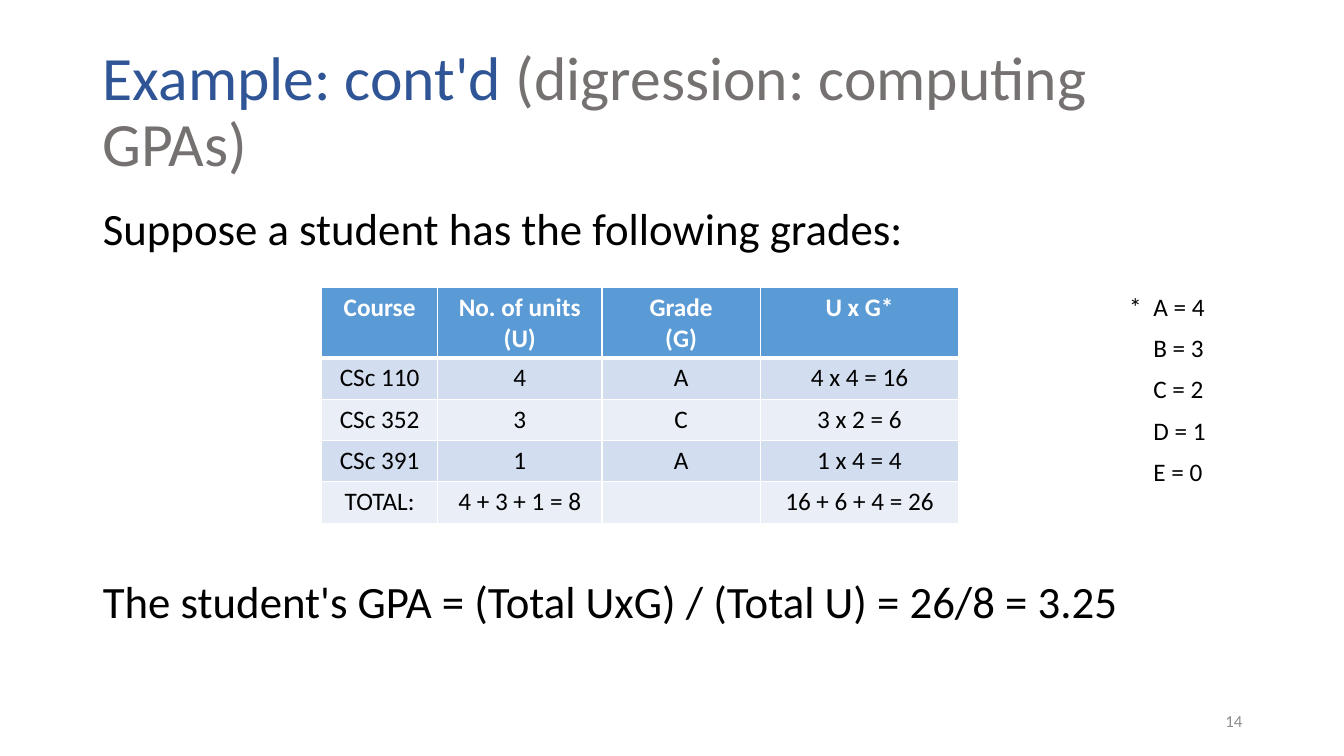
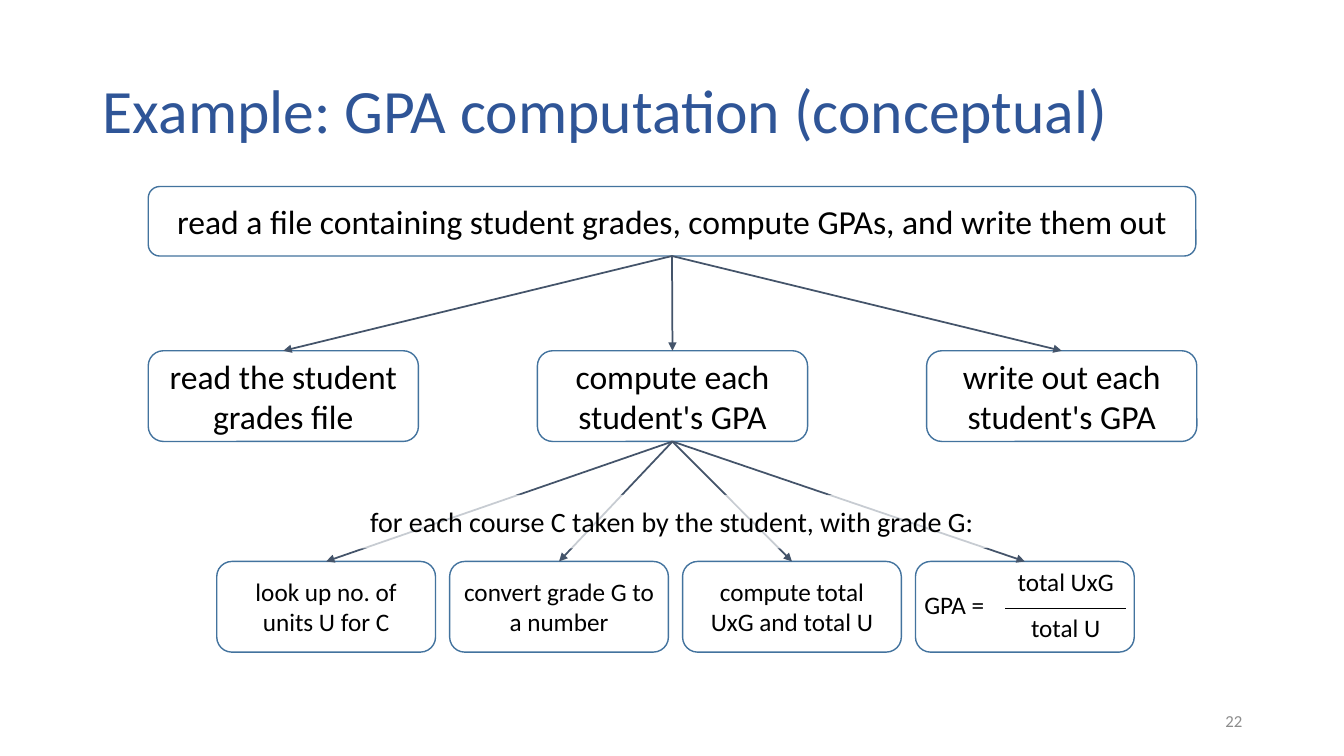
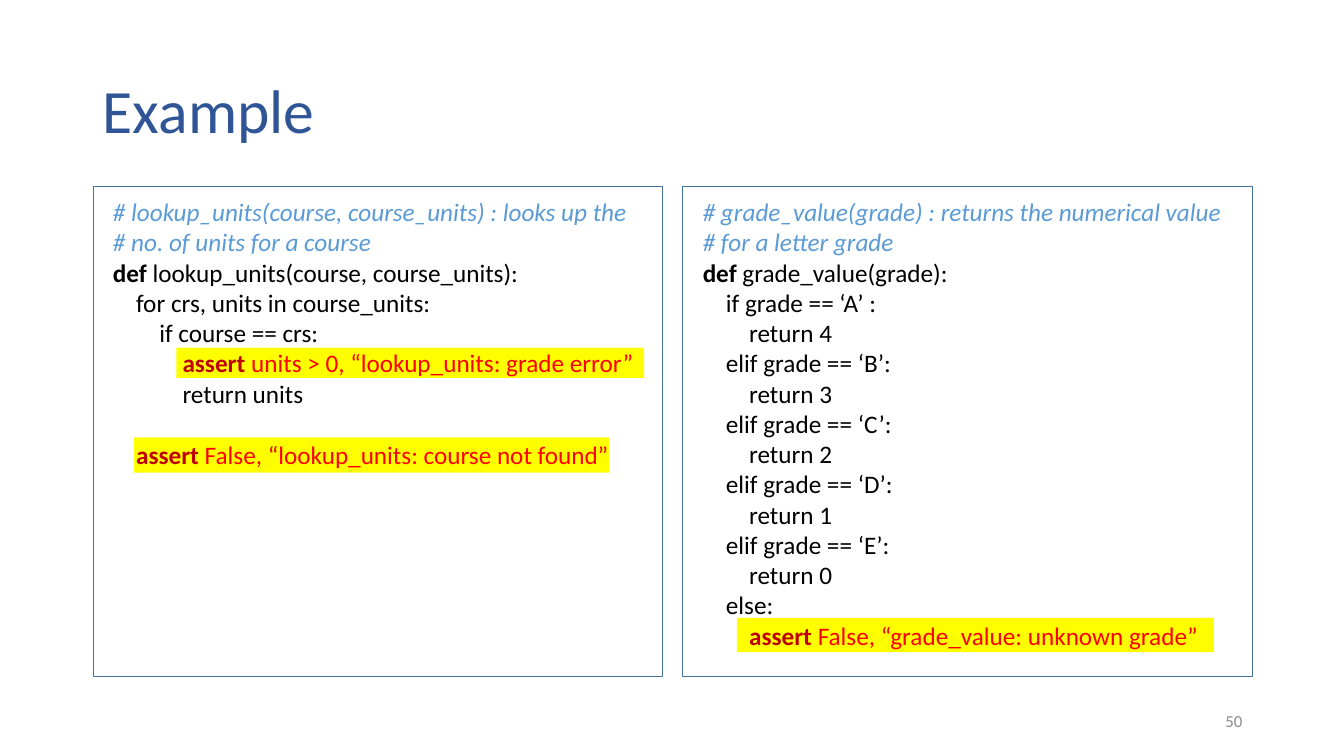
from lxml.etree import SubElement
from pptx import Presentation
from pptx.dml.color import RGBColor
from pptx.enum.shapes import MSO_CONNECTOR as Connector, MSO_SHAPE as Preset
from pptx.enum.text import MSO_ANCHOR as Anchor, MSO_AUTO_SIZE as AutoSize, PP_ALIGN as Align
from pptx.oxml.ns import qn
from pptx.util import Pt

PX = 9144
FONT = "Calibri"
NO_TABLE_STYLE = "{2D5ABB26-0587-4C30-8999-92F81FD0307C}"

BLACK = RGBColor(0x00, 0x00, 0x00)
WHITE = RGBColor(0xFF, 0xFF, 0xFF)
TITLE_BLUE = RGBColor(0x2F, 0x55, 0x97)
ASIDE_GRAY = RGBColor(0x76, 0x71, 0x71)
NUMBER_GRAY = RGBColor(0x8C, 0x8C, 0x8C)
OUTLINE_BLUE = RGBColor(0x43, 0x73, 0x9E)
ARROW_SLATE = RGBColor(0x44, 0x54, 0x6A)
HEADER_BLUE = RGBColor(0x5B, 0x9B, 0xD5)
BAND_DARK = RGBColor(0xD2, 0xDE, 0xEF)
BAND_LIGHT = RGBColor(0xEA, 0xEF, 0xF7)
HIGHLIGHT = RGBColor(0xFF, 0xFF, 0x00)
KEYWORD_RED = RGBColor(0xC0, 0x00, 0x00)
ASSERT_RED = RGBColor(0xFF, 0x00, 0x00)

TITLE = {"size": Pt(44), "color": TITLE_BLUE}
TITLE_ASIDE = {"size": Pt(44), "color": ASIDE_GRAY}
BODY = {"size": Pt(32), "color": BLACK}
NUMBER = {"size": Pt(12), "color": NUMBER_GRAY}
STEP = {"size": Pt(24), "color": BLACK}
CAPTION = {"size": Pt(20), "color": BLACK}
SMALL = {"size": Pt(18), "color": BLACK}
TABLE_HEADER = {"size": Pt(18), "color": WHITE, "bold": True}
CODE = {**SMALL, "bold": False}
CODE_KEYWORD = {**SMALL, "bold": True}
CODE_COMMENT = {"size": Pt(18), "color": HEADER_BLUE, "italic": True}
ASSERT_KEYWORD = {"size": Pt(18), "color": KEYWORD_RED, "bold": True}
ASSERT_TEXT = {"size": Pt(18), "color": ASSERT_RED, "bold": False}

CENTERED = {"alignment": Align.CENTER}
LEFT = {"alignment": Align.LEFT}
TIGHT = {"alignment": Align.LEFT, "line_spacing": 0.9}
CODE_INDENT = 23
CODE_LINE = Pt(22)

GRADES = [
    ["Course", "No. of units (U)", "Grade\n(G)", "U x G*"],
    ["CSc 110", "4", "A", "4 x 4 = 16"],
    ["CSc 352", "3", "C", "3 x 2 = 6"],
    ["CSc 391", "1", "A", "1 x 4 = 4"],
    ["TOTAL:", "4 + 3 + 1 = 8", "", "16 + 6 + 4 = 26"],
]
GRADE_POINTS = [["*", "A = 4"], ["", "B = 3"], ["", "C = 2"], ["", "D = 1"], ["", "E = 0"]]
MAIN_STEPS = ["read the student grades file", "compute each student's GPA", "write out each student's GPA"]
COURSE_STEPS = ["look up no. of units U for C", "convert grade G to a number", "compute total UxG and total U", ""]


def px(*lengths):
    return [length * PX for length in lengths]


def set_attributes(target, values):
    for name, value in values.items():
        setattr(target, name, value)


def write_paragraph(paragraph, runs, layout):
    set_attributes(paragraph, layout)
    for text, style in runs:
        run = paragraph.add_run()
        run.text = text
        values = dict(style, name=FONT)
        run.font.color.rgb = values.pop("color")
        set_attributes(run.font, values)


def write_paragraphs(frame, paragraphs):
    for index, (runs, layout) in enumerate(paragraphs):
        paragraph = frame.add_paragraph() if index else frame.paragraphs[0]
        write_paragraph(paragraph, runs, layout)


def indent_paragraph(paragraph, left):
    properties = paragraph._p.get_or_add_pPr()
    properties.set("marL", str(left * PX))
    properties.set("indent", "0")


def place(shape, left, top, width, height):
    set_attributes(shape, dict(zip(("left", "top", "width", "height"), px(left, top, width, height))))


def add_slide(presentation, layout_index, title_runs, number):
    slide = presentation.slides.add_slide(presentation.slide_layouts[layout_index])
    title = slide.shapes.title
    place(title, 92, 40, 1150, 145)
    set_attributes(title.text_frame, {"auto_size": AutoSize.NONE, "vertical_anchor": Anchor.MIDDLE})
    write_paragraphs(title.text_frame, [(title_runs, TIGHT)])
    number_box = slide.shapes.add_textbox(*px(942, 695, 300, 40))
    set_attributes(number_box.text_frame, {"word_wrap": True, "vertical_anchor": Anchor.MIDDLE})
    write_paragraphs(number_box.text_frame, [([(number, NUMBER)], {"alignment": Align.RIGHT})])
    return slide


def add_body(slide, sentences, gap):
    body = slide.placeholders[1]
    place(body, 92, 200, 1150, 476)
    body.text_frame.auto_size = AutoSize.NONE
    spacings = [Pt(10)] + [gap] * (len(sentences) - 1)
    write_paragraphs(body.text_frame, [
        ([(sentence, BODY)], {**TIGHT, "space_before": spacing})
        for sentence, spacing in zip(sentences, spacings)])
    for paragraph in body.text_frame.paragraphs:
        indent_paragraph(paragraph, 0)
        SubElement(paragraph._p.get_or_add_pPr(), qn("a:buNone"))


def add_box(slide, preset, bounds, fill=None, line=None, line_width=1):
    box = slide.shapes.add_shape(preset, *px(*bounds))
    box.shadow.inherit = False
    if fill is None:
        box.fill.background()
    else:
        box.fill.solid()
        box.fill.fore_color.rgb = fill
    if line is None:
        box.line.fill.background()
    else:
        box.line.color.rgb = line
        box.line.width = Pt(line_width)
    return box


def add_label_box(slide, bounds, text, style, **colors):
    box = add_box(slide, Preset.ROUNDED_RECTANGLE, bounds, **colors)
    if text:
        box.text_frame.vertical_anchor = Anchor.MIDDLE
        write_paragraphs(box.text_frame, [([(text, style)], CENTERED)])
    return box


def set_opacity(shape, percent):
    color = shape.fill._xPr.find(qn("a:solidFill"))[0]
    SubElement(color, qn("a:alpha")).set("val", str(percent * 1000))


def add_arrow(slide, source, target):
    arrow = slide.shapes.add_connector(Connector.STRAIGHT, 0, 0, 0, 0)
    arrow.begin_connect(source, 2)
    arrow.end_connect(target, 0)
    arrow.line.color.rgb = ARROW_SLATE
    arrow.line.width = Pt(1.25)
    SubElement(arrow.line._get_or_add_ln(), qn("a:tailEnd")).set("type", "triangle")
    SubElement(arrow._element.spPr, qn("a:effectLst"))


def set_borders(cell, color, widths):
    properties = cell._tc.get_or_add_tcPr()
    borders = [side for side in ("lnL", "lnR", "lnT", "lnB") if side in widths]
    for position, side in enumerate(borders):
        border = SubElement(properties, qn("a:" + side))
        border.set("w", str(Pt(widths[side])))
        fill = SubElement(border, qn("a:solidFill"))
        SubElement(fill, qn("a:srgbClr")).set("val", str(color))
        properties.insert(position, border)


def write_cell(cell, text, style, layout):
    write_paragraphs(cell.text_frame, [([(line, style)] if line else [], layout) for line in text.split("\n")])
    if not text:
        cell.text_frame.paragraphs[0].font.size = style["size"]


def add_plain_table(slide, left, top, column_widths, row_heights):
    bounds = px(left, top, sum(column_widths), sum(row_heights))
    table = slide.shapes.add_table(len(row_heights), len(column_widths), *bounds).table
    set_attributes(table, {"first_row": False, "horz_banding": False})
    table._tbl.tblPr.find(qn("a:tableStyleId")).text = NO_TABLE_STYLE
    for column, width in zip(table.columns, column_widths):
        column.width = width * PX
    for row, height in zip(table.rows, row_heights):
        row.height = height * PX
    for cell in table.iter_cells():
        cell.fill.background()
    return table


def add_grades_table(slide):
    table = add_plain_table(slide, 319, 285, [115, 163, 157, 197], [70] + [41] * 4)
    for row_index, row in enumerate(GRADES):
        is_header = row_index == 0
        fill = HEADER_BLUE if is_header else (BAND_LIGHT, BAND_DARK)[row_index % 2]
        top = 3 if row_index == 1 else 1
        widths = {"lnL": 1, "lnR": 1, "lnT": top, "lnB": 3 if is_header else 1}
        for column_index, text in enumerate(row):
            cell = table.cell(row_index, column_index)
            cell.fill.solid()
            cell.fill.fore_color.rgb = fill
            set_borders(cell, WHITE, widths)
            write_cell(cell, text, TABLE_HEADER if is_header else SMALL, CENTERED)


def add_points_table(slide):
    table = add_plain_table(slide, 1110, 285, [23, 98], [41] * 5)
    for row_index, row in enumerate(GRADE_POINTS):
        for column_index, text in enumerate(row):
            write_cell(table.cell(row_index, column_index), text, SMALL, LEFT)


def add_fraction(slide):
    table = add_plain_table(slide, 896, 558, [101, 120], [46, 40])
    name, numerator, denominator = table.cell(0, 0), table.cell(0, 1), table.cell(1, 1)
    name.merge(table.cell(1, 0))
    name.vertical_anchor = Anchor.MIDDLE
    for cell, text in ((name, "GPA ="), (numerator, "total UxG"), (denominator, "total U")):
        write_cell(cell, text, SMALL, CENTERED)
    set_borders(numerator, BLACK, {"lnB": 1})
    set_borders(denominator, BLACK, {"lnT": 1})


def comment(text):
    return 0, [(text, CODE_COMMENT)], {}


def definition(signature):
    return 0, [("def ", CODE_KEYWORD), (signature, CODE)], {}


def statement(level, text):
    return level, [(text, CODE)], {}


def assertion(level, text, **spacing):
    return level, [("assert ", ASSERT_KEYWORD), (text, ASSERT_TEXT)], spacing


def grade_branches():
    lines = []
    for value, grade in zip((4, 3, 2, 1, 0), "ABCDE"):
        opening = "if grade == ‘A’ :" if grade == "A" else f"elif grade == ‘{grade}’:"
        lines += [statement(1, opening), statement(2, f"return {value}")]
    return lines


def add_code_panel(slide, left, lines):
    panel = add_box(slide, Preset.RECTANGLE, (left, 185, 565, 486), line=OUTLINE_BLUE, line_width=0.25)
    frame = panel.text_frame
    set_attributes(frame, {"vertical_anchor": Anchor.TOP, "margin_left": 20 * PX, "margin_top": 10 * PX})
    write_paragraphs(frame, [(runs, {**LEFT, **spacing}) for level, runs, spacing in lines])
    for paragraph, (level, runs, spacing) in zip(frame.paragraphs, lines):
        indent_paragraph(paragraph, level * CODE_INDENT)


def build_grades_slide(presentation):
    title = [("Example: cont'd ", TITLE), ("(digression: computing GPAs)", TITLE_ASIDE)]
    slide = add_slide(presentation, 1, title, "14")
    add_body(slide, ["Suppose a student has the following grades:",
                     "The student's GPA = (Total UxG) / (Total U) = 26/8 = 3.25"], Pt(232))
    add_grades_table(slide)
    add_points_table(slide)


def build_concept_slide(presentation):
    slide = add_slide(presentation, 5, [("Example: GPA computation (conceptual)", TITLE)], "22")
    goal = add_label_box(slide, (147, 185, 1039, 69),
                         "read a file containing student grades, compute GPAs, and write them out",
                         STEP, line=OUTLINE_BLUE)
    main_boxes = [add_label_box(slide, (147 + 386 * index, 348, 268, 90), text, STEP, line=OUTLINE_BLUE)
                  for index, text in enumerate(MAIN_STEPS)]
    course_boxes = [add_label_box(slide, (215 + 231 * index, 557, 217, 90), text, SMALL, line=OUTLINE_BLUE)
                    for index, text in enumerate(COURSE_STEPS)]
    add_fraction(slide)
    for source, targets in ((goal, main_boxes), (main_boxes[1], course_boxes)):
        for target in targets:
            add_arrow(slide, source, target)
    caption = add_label_box(slide, (348, 491, 637, 53),
                            "for each course C taken by the student, with grade G:", CAPTION, fill=WHITE)
    set_opacity(caption, 70)


def build_code_slide(presentation):
    slide = add_slide(presentation, 5, [("Example", TITLE)], "50")
    for bounds in ((175, 345, 464, 30), (731, 613, 473, 34), (133, 434, 471, 35)):
        add_box(slide, Preset.RECTANGLE, bounds, fill=HIGHLIGHT)
    add_code_panel(slide, 92, [
        comment("# lookup_units(course, course_units) : looks up the"),
        comment("# no. of units for a course"),
        definition("lookup_units(course, course_units):"),
        statement(1, "for crs, units in course_units:"),
        statement(2, "if course == crs:"),
        assertion(3, "units > 0, “lookup_units: grade error”"),
        statement(3, "return units"),
        assertion(1, "False, “lookup_units: course not found”", space_before=CODE_LINE),
    ])
    add_code_panel(slide, 677, [
        comment("# grade_value(grade) : returns the numerical value"),
        comment("# for a letter grade"),
        definition("grade_value(grade):"),
        *grade_branches(),
        statement(1, "else:"),
        assertion(2, "False, “grade_value: unknown grade”"),
    ])


def main():
    presentation = Presentation()
    set_attributes(presentation, dict(zip(("slide_width", "slide_height"), px(1333, 750))))
    build_grades_slide(presentation)
    build_concept_slide(presentation)
    build_code_slide(presentation)
    presentation.save("out.pptx")


if __name__ == "__main__":
    main()
